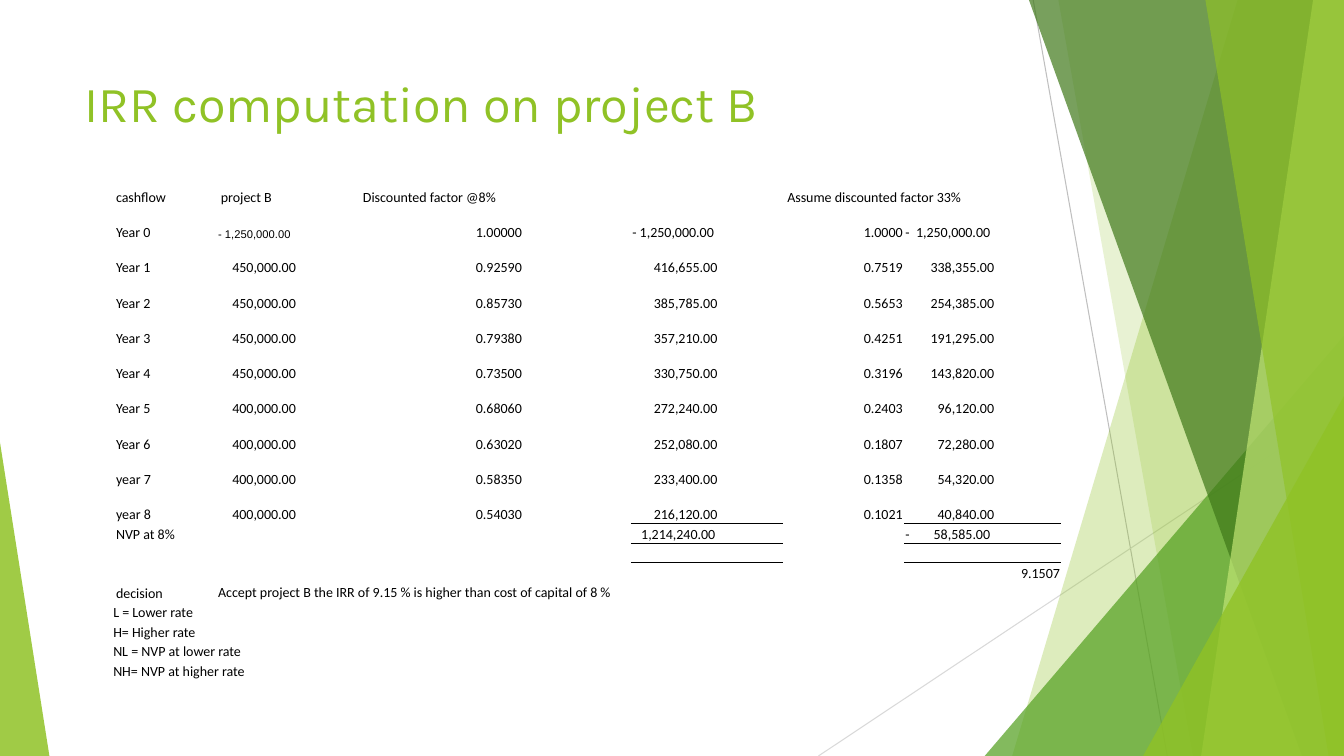
from lxml.etree import SubElement
from pptx import Presentation
from pptx.dml.color import RGBColor
from pptx.enum.shapes import MSO_CONNECTOR, MSO_SHAPE
from pptx.enum.text import MSO_ANCHOR, PP_ALIGN
from pptx.oxml.ns import qn
from pptx.util import Pt

STRAIGHT = MSO_CONNECTOR.STRAIGHT
TRIANGLE = MSO_SHAPE.ISOSCELES_TRIANGLE
BOTTOM, MIDDLE = MSO_ANCHOR.BOTTOM, MSO_ANCHOR.MIDDLE
LEFT, RIGHT = PP_ALIGN.LEFT, PP_ALIGN.RIGHT

BLACK = RGBColor(0x00, 0x00, 0x00)
LIME = RGBColor(0x90, 0xC2, 0x26)
GREEN = RGBColor(0x54, 0xA0, 0x21)
FOREST = RGBColor(0x3F, 0x78, 0x19)
PALE = RGBColor(0xC0, 0xE4, 0x74)
GREY = RGBColor(0xBF, 0xBF, 0xBF)
LIGHT_GREY = RGBColor(0xD9, 0xD9, 0xD9)

WIDTH, HEIGHT = 960, 540
NO_GRID_STYLE = "{2D5ABB26-0587-4C30-8999-92F81FD0307C}"
COLUMN_WIDTHS = (74.9, 101.5, 194.4, 108.7, 86.4, 112.3, 74.9)
RIGHT_INSETS = (1, 45, 78, 47, 1, 48, 1)
FIRST_YEAR, LAST_YEAR, TOTAL, RATE, DECISION, LEGEND = 1, 9, 10, 12, 13, 14
ROW_COUNT = 19
HEADERS = {0: "cashflow", 1: "project B", 2: "Discounted factor @8%", 4: "Assume discounted factor 33%"}
YEARS = (
    ("Year 0", "- 1,250,000.00", "1.00000", "- 1,250,000.00", "1.0000", "-\t1,250,000.00"),
    ("Year 1", "450,000.00", "0.92590", "416,655.00", "0.7519", "338,355.00"),
    ("Year 2", "450,000.00", "0.85730", "385,785.00", "0.5653", "254,385.00"),
    ("Year 3", "450,000.00", "0.79380", "357,210.00", "0.4251", "191,295.00"),
    ("Year 4", "450,000.00", "0.73500", "330,750.00", "0.3196", "143,820.00"),
    ("Year 5", "400,000.00", "0.68060", "272,240.00", "0.2403", "96,120.00"),
    ("Year 6", "400,000.00", "0.63020", "252,080.00", "0.1807", "72,280.00"),
    ("year 7", "400,000.00", "0.58350", "233,400.00", "0.1358", "54,320.00"),
    ("year 8", "400,000.00", "0.54030", "216,120.00", "0.1021", "40,840.00"),
)
RATE_LEGEND = ("L = Lower rate", "H= Higher rate", "NL = NVP at lower rate", "NH= NVP at higher rate")


def style_fill(shape, color, opacity):
    shape.shadow.inherit = False
    shape.fill.solid()
    shape.fill.fore_color.rgb = color
    shape.line.fill.background()
    for color_element in shape.fill._xPr.iter(qn("a:srgbClr")):
        SubElement(color_element, qn("a:alpha"), val=str(opacity * 1000))


def add_line(slide, start, end, color):
    line = slide.shapes.add_connector(STRAIGHT, *(Pt(value) for value in start + end))
    line.line.color.rgb = color
    line.line.width = Pt(0.75)
    SubElement(line._element.spPr, qn("a:effectLst"))


def add_band(slide, top_left, top_right, bottom_right, bottom_left, color, opacity):
    builder = slide.shapes.build_freeform(top_left, 0, scale=Pt(1))
    builder.add_line_segments([(top_right, 0), (bottom_right, HEIGHT), (bottom_left, HEIGHT)])
    style_fill(builder.convert_to_shape(), color, opacity)


def add_triangle(slide, left, top, width, apex, color, opacity):
    triangle = slide.shapes.add_shape(TRIANGLE, Pt(left), Pt(top), Pt(width), Pt(HEIGHT - top))
    triangle.adjustments[0] = apex
    style_fill(triangle, color, opacity)


def add_backdrop(slide):
    add_line(slide, (738, 0), (833.8, HEIGHT), GREY)
    add_line(slide, (WIDTH, 290.2), (584.6, HEIGHT), LIGHT_GREY)
    add_band(slide, 884.2, WIDTH, WIDTH, 722.9, LIME, 30)
    add_band(slide, 756, WIDTH, WIDTH, 851.8, LIME, 20)
    add_triangle(slide, 703.4, 239.8, 256.6, 1, GREEN, 72)
    add_band(slide, 735.1, WIDTH, WIDTH, 929.5, FOREST, 70)
    add_band(slide, 938.2, WIDTH, WIDTH, 858.2, PALE, 70)
    add_band(slide, 861.1, WIDTH, WIDTH, 949, LIME, 65)
    add_triangle(slide, 816.5, 283, 143.5, 1, LIME, 80)
    add_triangle(slide, 0, 316.1, 35.3, 0, LIME, 85)


def add_title(slide, left, top, width, height):
    box = slide.shapes.add_textbox(Pt(left), Pt(top), Pt(width), Pt(height))
    box.text_frame.word_wrap = True
    box.text_frame.text = "IRR computation on project B"
    font = box.text_frame.paragraphs[0].runs[0].font
    font.name, font.size, font.color.rgb = "Karla", Pt(36), LIME


def write_cell(cell, text, left_inset=1, right_inset=1, alignment=LEFT, font_name="Calibri", size=10):
    cell.margin_left, cell.margin_right = Pt(left_inset), Pt(right_inset)
    cell.text = text
    paragraph = cell.text_frame.paragraphs[0]
    paragraph.alignment = alignment
    if "\t" in text:
        tabs = SubElement(paragraph._p.get_or_add_pPr(), qn("a:tabLst"))
        SubElement(tabs, qn("a:tab"), pos=str(Pt(60.5)), algn="r")
    for run in paragraph.runs:
        run.font.name, run.font.size, run.font.color.rgb = font_name, Pt(size), BLACK


def add_border(cell, side, width):
    border = cell._tc.get_or_add_tcPr().makeelement(qn(side), {"w": str(Pt(width))})
    fill = SubElement(border, qn("a:solidFill"))
    SubElement(fill, qn("a:srgbClr"), val=str(BLACK))
    cell._tc.tcPr.insert(0, border)


def prepare_table(table):
    table.first_row = table.horz_banding = False
    table._tbl.tblPr.find(qn("a:tableStyleId")).text = NO_GRID_STYLE
    for column, width in zip(table.columns, COLUMN_WIDTHS):
        column.width = Pt(width)
    for index, row in enumerate(table.rows):
        row.height = Pt(25.2 if FIRST_YEAR <= index <= LAST_YEAR else 14)
        for cell in row.cells:
            cell.fill.background()
            cell.vertical_anchor = BOTTOM
            cell.margin_left = cell.margin_right = cell.margin_top = Pt(1)
            cell.margin_bottom = 0
            SubElement(cell.text_frame.paragraphs[0]._p, qn("a:endParaRPr"), sz="1000")
    spans = [(0, 4, 6), (TOTAL, 0, 1), (RATE, 0, 2), (DECISION, 1, 5)]
    spans += [(LEGEND + index, 0, 1) for index in range(len(RATE_LEGEND))]
    for row, first, last in spans:
        table.cell(row, first).merge(table.cell(row, last))


def add_cashflow_table(slide, left, top):
    frame = slide.shapes.add_table(ROW_COUNT, len(COLUMN_WIDTHS), Pt(left), Pt(top),
                                   Pt(sum(COLUMN_WIDTHS)), Pt(14 * ROW_COUNT))
    table = frame.table
    prepare_table(table)
    for column, text in HEADERS.items():
        write_cell(table.cell(0, column), text, left_inset=3)
    for row, values in enumerate(YEARS, FIRST_YEAR):
        write_cell(table.cell(row, 0), values[0], left_inset=3)
        for column, text in enumerate(values[1:], 1):
            cell = table.cell(row, column)
            if text.startswith("-"):
                small = column == 1
                write_cell(cell, text, font_name="Arial" if small else "Calibri", size=8 if small else 10)
            else:
                write_cell(cell, text, right_inset=RIGHT_INSETS[column], alignment=RIGHT)
    write_cell(table.cell(TOTAL, 0), "NVP at 8%", left_inset=3)
    write_cell(table.cell(TOTAL, 3), "1,214,240.00", right_inset=48.5, alignment=RIGHT)
    write_cell(table.cell(TOTAL, 5), "-\t58,585.00")
    for column in (3, 5):
        add_border(table.cell(LAST_YEAR, column), "a:lnB", 0.5)
        add_border(table.cell(TOTAL, column), "a:lnB", 1)
        add_border(table.cell(TOTAL, column), "a:lnT", 0.5)
        add_border(table.cell(TOTAL + 1, column), "a:lnT", 1)
    write_cell(table.cell(RATE, 5), "9.1507", alignment=RIGHT)
    write_cell(table.cell(DECISION, 0), "decision", left_inset=3)
    decision = table.cell(DECISION, 1)
    write_cell(decision, "Accept project B the IRR of 9.15 % is higher than cost of capital of 8 %")
    decision.vertical_anchor = MIDDLE
    for row, text in enumerate(RATE_LEGEND, LEGEND):
        write_cell(table.cell(row, 0), text)


def main():
    presentation = Presentation()
    presentation.slide_width, presentation.slide_height = Pt(WIDTH), Pt(HEIGHT)
    slide = presentation.slides.add_slide(presentation.slide_layouts[6])
    add_backdrop(slide)
    add_title(slide, 53.3, 48.2, 676.8, 103.7)
    add_cashflow_table(slide, 79.9, 133.2)
    presentation.save("out.pptx")


if __name__ == "__main__":
    main()
